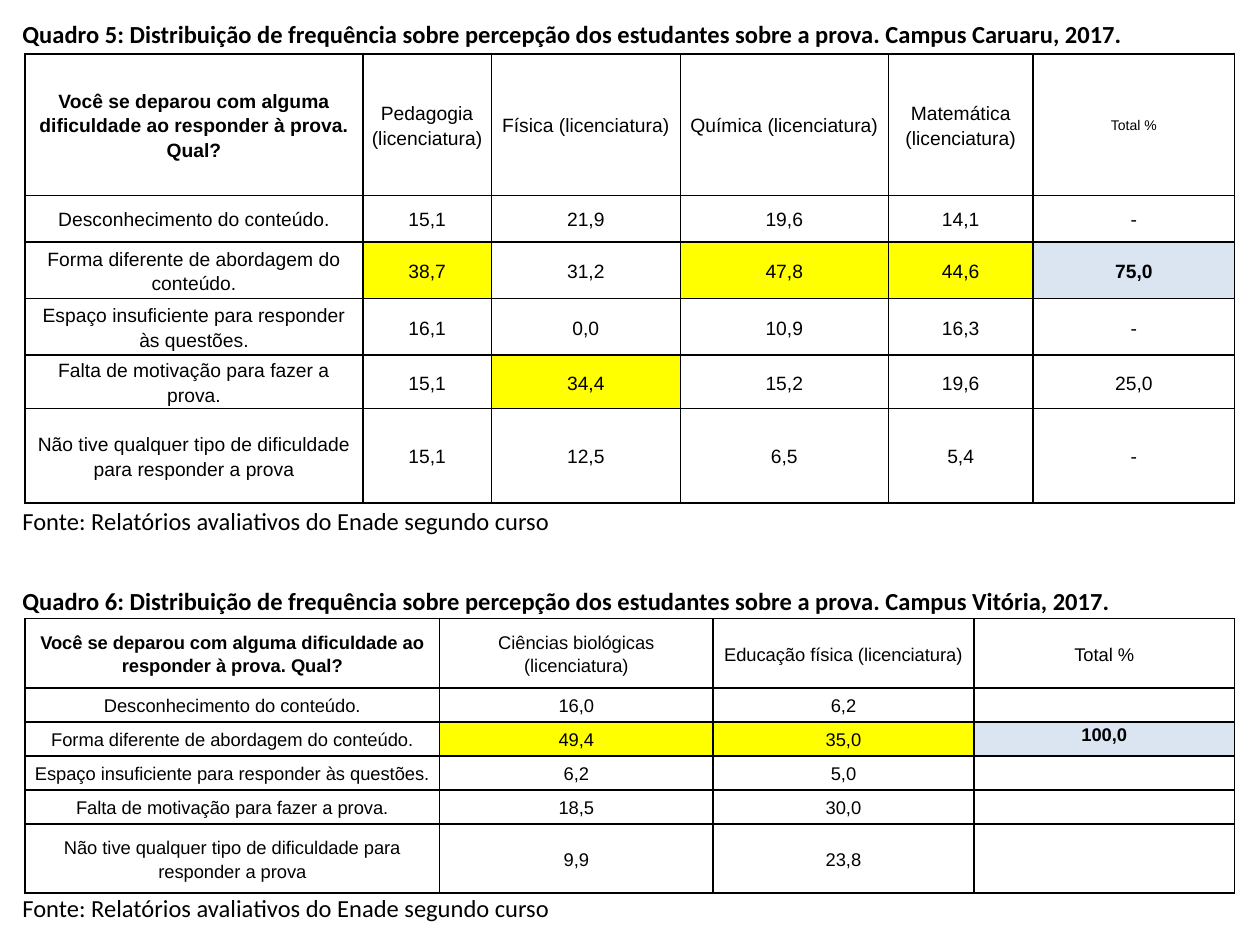
import pptx
import pptx.dml.color
import pptx.enum.text
import pptx.oxml
import pptx.oxml.ns
import pptx.util
import lxml.etree

presentation = pptx.Presentation()
presentation.slide_width = pptx.util.Inches(10)
presentation.slide_height = pptx.util.Inches(7.5)
slide = presentation.slides.add_slide(presentation.slide_layouts[6])

# One percent of the slide in each direction
column_unit = presentation.slide_width / 100
row_unit = presentation.slide_height / 100

ANCHOR = pptx.enum.text.MSO_ANCHOR
YELLOW, BLUE = "FFFF00", "DAE5F1"
DRAWING = "http://schemas.openxmlformats.org/drawingml/2006/main"


def color(hex_string):
    return pptx.dml.color.RGBColor.from_string(hex_string)


def add_run(paragraph, text, size, font_name, bold):
    run = paragraph.add_run()
    run.text = text
    run.font.size = pptx.util.Pt(size)
    run.font.name = font_name
    run.font.bold = bold
    run.font.color.rgb = color("000000")


# Captions and sources: text, top, width, height, bold
source = "Fonte: Relatórios avaliativos do Enade segundo curso"
caption = "Distribuição de frequência sobre percepção dos estudantes sobre a prova."
lines = [
    (f"Quadro 5: {caption} Campus Caruaru, 2017.", 1.73, 98.4, 3.73, True),
    (source, 52.93, 44.3, 4.53, False),
    (f"Quadro 6: {caption} Campus Vitória, 2017.", 61.73, 98.4, 3.73, True),
    (source, 93.87, 44.3, 4.53, False),
]
for text, top, width, height, bold in lines:
    box = slide.shapes.add_textbox(
        int(0.8 * column_unit), int(top * row_unit),
        int(width * column_unit), int(height * row_unit))
    frame = box.text_frame
    frame.word_wrap = True
    frame.vertical_anchor = ANCHOR.MIDDLE if bold else ANCHOR.TOP
    add_run(frame.paragraphs[0], text, 14, "Calibri", bold)

# Table contents
question = "Você se deparou com alguma dificuldade ao responder à prova. Qual?"
answers = [
    "Desconhecimento do conteúdo.",
    "Forma diferente de abordagem do conteúdo.",
    "Espaço insuficiente para responder às questões.",
    "Falta de motivação para fazer a prova.",
    "Não tive qualquer tipo de dificuldade para responder a prova",
]
tables = [
    {
        "top": 5.73, "size": 11, "margin": 0.5,
        "columns": [26.8, 10.2, 15, 16.5, 11.5, 16],
        "rows": [14.93, 4.93, 6, 6, 4, 10],
        "header": ["Pedagogia (licenciatura)", "Física (licenciatura)",
                   "Química (licenciatura)", "Matemática (licenciatura)", "Total %"],
        "values": [
            ["15,1", "21,9", "19,6", "14,1", "-"],
            ["38,7", "31,2", "47,8", "44,6", "75,0"],
            ["16,1", "0,0", "10,9", "16,3", "-"],
            ["15,1", "34,4", "15,2", "19,6", "25,0"],
            ["15,1", "12,5", "6,5", "5,4", "-"],
        ],
        "fills": {(2, 1): YELLOW, (2, 3): YELLOW, (2, 4): YELLOW,
                  (4, 2): YELLOW, (2, 5): BLUE},
        "sizes": {(0, 5): 8},
        "top_anchored": [],
    },
    {
        "top": 65.47, "size": 10.5, "margin": 0.4,
        "columns": [32.9, 21.7, 20.7, 20.7],
        "rows": [7.33, 3.6, 3.6, 3.6, 3.6, 7.33],
        "header": ["Ciências biológicas (licenciatura)",
                   "Educação física (licenciatura)", "Total %"],
        "values": [
            ["16,0", "6,2", ""],
            ["49,4", "35,0", "100,0"],
            ["6,2", "5,0", ""],
            ["18,5", "30,0", ""],
            ["9,9", "23,8", ""],
        ],
        "fills": {(2, 1): YELLOW, (2, 2): YELLOW, (2, 3): BLUE},
        "sizes": {},
        "top_anchored": [(2, 3)],
    },
]

# Tables
for data in tables:
    grid = [[question] + data["header"]]
    grid += [[answer] + values for answer, values in zip(answers, data["values"])]
    table = slide.shapes.add_table(
        len(data["rows"]), len(data["columns"]),
        int(2 * column_unit), int(data["top"] * row_unit),
        int(sum(data["columns"]) * column_unit),
        int(sum(data["rows"]) * row_unit)).table
    table.first_row = False
    table.horz_banding = False
    for column, width in zip(table.columns, data["columns"]):
        column.width = int(width * column_unit)
    for row, height in zip(table.rows, data["rows"]):
        row.height = int(height * row_unit)

    for row_index, texts in enumerate(grid):
        for column_index, text in enumerate(texts):
            place = (row_index, column_index)
            cell = table.cell(*place)
            cell.margin_left = cell.margin_right = int(data["margin"] * column_unit)
            cell.margin_top = cell.margin_bottom = 0
            top_anchored = place in data["top_anchored"]
            cell.vertical_anchor = ANCHOR.TOP if top_anchored else ANCHOR.MIDDLE

            # Thin black borders on all four sides
            properties = cell._tc.get_or_add_tcPr()
            for side in ("lnL", "lnR", "lnT", "lnB"):
                properties.append(pptx.oxml.parse_xml(
                    f'<a:{side} xmlns:a="{DRAWING}" w="12700"><a:solidFill>'
                    f'<a:srgbClr val="000000"/></a:solidFill></a:{side}>'))

            fill = data["fills"].get(place)
            if fill:
                cell.fill.solid()
                cell.fill.fore_color.rgb = color(fill)
            else:
                cell.fill.background()

            paragraph = cell.text_frame.paragraphs[0]
            paragraph.alignment = pptx.enum.text.PP_ALIGN.CENTER
            paragraph.line_spacing = 1.15
            size = data["sizes"].get(place, data["size"])
            if text:
                bold = place == (0, 0) or fill == BLUE
                add_run(paragraph, text, size, "Arial", bold)
            else:
                # Small text size keeps the empty cell from stretching its row
                lxml.etree.SubElement(
                    paragraph._p, pptx.oxml.ns.qn("a:endParaRPr"),
                    sz=str(int(size * 100)))

presentation.save("out.pptx")
